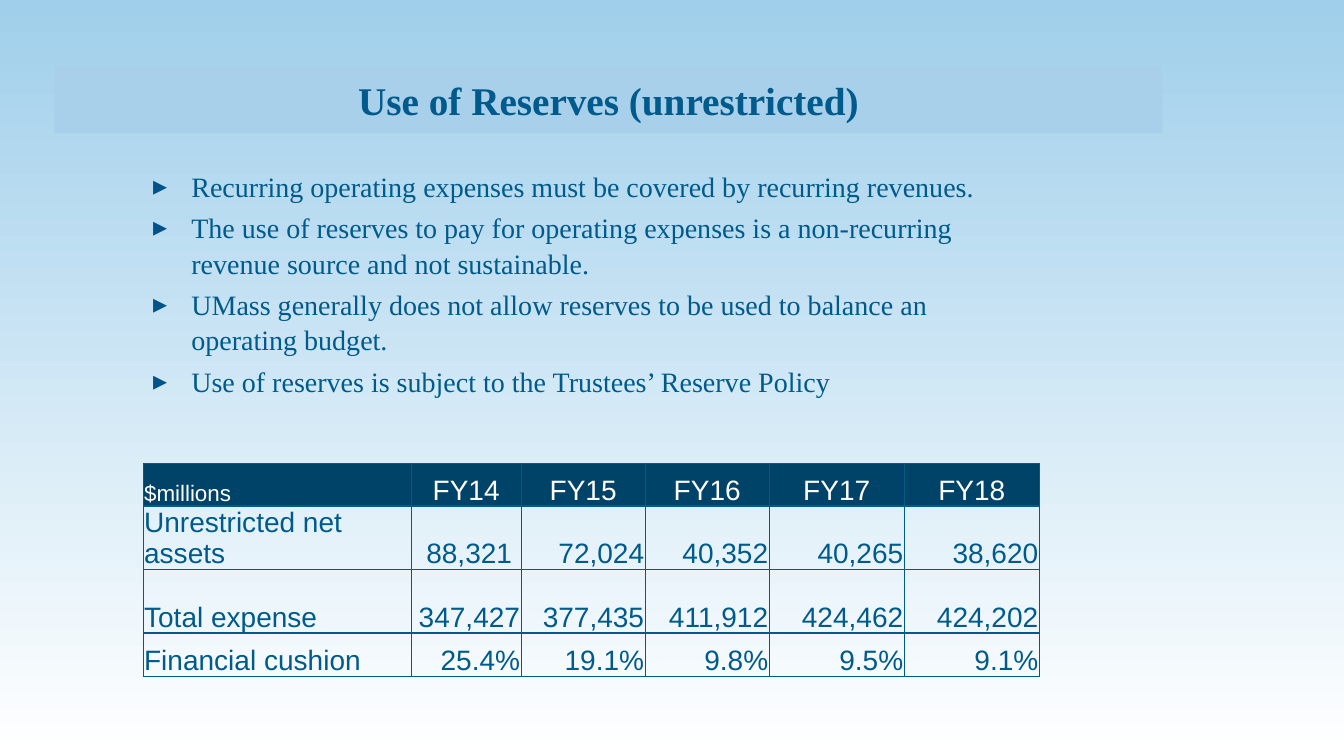
"""Build the slide on the use of unrestricted reserves."""
from dataclasses import dataclass

from lxml.etree import SubElement
from pptx import Presentation
from pptx.dml.color import RGBColor
from pptx.enum.shapes import MSO_SHAPE
from pptx.enum.text import MSO_ANCHOR, PP_ALIGN
from pptx.oxml import parse_xml
from pptx.oxml.ns import nsdecls, qn
from pptx.slide import Slide
from pptx.table import _Cell
from pptx.text.text import Font
from pptx.util import Inches, Pt

SLIDE_WIDTH = Inches(13.33)
SLIDE_HEIGHT = Inches(7.5)


@dataclass(frozen=True)
class Theme:
    sky: str = "A0CFEB"
    white: str = "FFFFFF"
    band: str = "A9D0EA"
    text: str = "005A8B"
    bullet: str = "005389"
    header: str = "004368"
    serif: str = "Times New Roman"
    sans: str = "Arial"
    title_size: int = 28
    body_size: int = 20
    unit_size: int = 16


@dataclass(frozen=True)
class Region:
    """A box in percent of the slide's width and height."""
    left: float
    top: float
    width: float
    height: float

    def place(self) -> tuple[int, int, int, int]:
        return (across(self.left), down(self.top), across(self.width), down(self.height))


@dataclass(frozen=True)
class TableRow:
    label: str
    values: tuple[str, ...]
    height: float


THEME = Theme()
TITLE = Region(4.05, 8.67, 82.45, 8.93)
BODY = Region(10.65, 21.47, 66.69, 34)
TABLE = Region(10.65, 61.33, 66.69, 28.13)
COLUMN_SHARES = (29.92, 12.26, 13.84, 13.84, 15.07, 15.07)
BULLETS = (
    "Recurring operating expenses must be covered by recurring revenues.",
    "The use of reserves to pay for operating expenses is a non-recurring revenue source "
    "and not sustainable.",
    "UMass generally does not allow reserves to be used to balance an operating budget.",
    "Use of reserves is subject to the Trustees’ Reserve Policy",
)
ROWS = (
    TableRow("$millions", ("FY14", "FY15", "FY16", "FY17", "FY18"), 5.6),
    TableRow("Unrestricted net assets", ("88,321", "72,024", "40,352", "40,265", "38,620"), 8.4),
    TableRow("Total expense", ("347,427", "377,435", "411,912", "424,462", "424,202"), 8.4),
    TableRow("Financial cushion", ("25.4%", "19.1%", "9.8%", "9.5%", "9.1%"), 5.73),
)


def across(percent: float) -> int:
    return round(SLIDE_WIDTH * percent / 100)


def down(percent: float) -> int:
    return round(SLIDE_HEIGHT * percent / 100)


def style(font: Font, name: str, size: int, color: str, bold: bool = False) -> None:
    font.name = name
    font.size = Pt(size)
    font.bold = bold
    font.color.rgb = RGBColor.from_string(color)


def paint_background(page: Slide) -> None:
    fill = page.background.fill
    fill.gradient()
    fill.gradient_angle = 270
    for stop, color in zip(fill.gradient_stops, (THEME.sky, THEME.white)):
        stop.color.rgb = RGBColor.from_string(color)


def add_title(page: Slide) -> None:
    box = page.shapes.add_shape(MSO_SHAPE.RECTANGLE, *TITLE.place())
    box.shadow.inherit = False
    box.fill.solid()
    box.fill.fore_color.rgb = RGBColor.from_string(THEME.band)
    box.line.fill.background()
    box.text_frame.text = "Use of Reserves (unrestricted)"
    box.text_frame.vertical_anchor = MSO_ANCHOR.MIDDLE
    para = box.text_frame.paragraphs[0]
    para.alignment = PP_ALIGN.CENTER
    style(para.runs[0].font, THEME.serif, THEME.title_size, THEME.text, bold=True)


def add_bullets(page: Slide) -> None:
    frame = page.shapes.add_textbox(*BODY.place()).text_frame
    frame.word_wrap = True
    frame.text = "\n".join(BULLETS)
    for index, para in enumerate(frame.paragraphs):
        para.line_spacing = 1.06
        para.space_before = Pt(4 if index else 0)
        properties = para._p.get_or_add_pPr()
        properties.set("marL", str(Inches(0.38)))
        properties.set("indent", str(Inches(-0.38)))
        color = SubElement(properties, qn("a:buClr"))
        SubElement(color, qn("a:srgbClr"), val=THEME.bullet)
        SubElement(properties, qn("a:buFont"), typeface=THEME.sans)
        SubElement(properties, qn("a:buChar"), char="▸")
        style(para.runs[0].font, THEME.serif, THEME.body_size, THEME.text)


def add_borders(cell: _Cell) -> None:
    properties = cell._tc.get_or_add_tcPr()
    for index, side in enumerate(("lnL", "lnR", "lnT", "lnB")):
        properties.insert(index, parse_xml(
            f'<a:{side} {nsdecls("a")} w="{Pt(1)}"><a:solidFill>'
            f'<a:srgbClr val="{THEME.text}"/></a:solidFill></a:{side}>'))


def fill_cell(cell: _Cell, text: str, is_header: bool, is_label: bool) -> None:
    cell.text_frame.text = text
    cell.vertical_anchor = MSO_ANCHOR.BOTTOM
    cell.margin_left = cell.margin_right = cell.margin_top = Inches(0.01)
    cell.margin_bottom = 0
    if is_header:
        cell.fill.solid()
        cell.fill.fore_color.rgb = RGBColor.from_string(THEME.header)
    else:
        cell.fill.background()
    add_borders(cell)
    para = cell.text_frame.paragraphs[0]
    if is_label:
        para.alignment = PP_ALIGN.LEFT
    else:
        para.alignment = PP_ALIGN.CENTER if is_header else PP_ALIGN.RIGHT
    size = THEME.unit_size if is_header and is_label else THEME.body_size
    style(para.runs[0].font, THEME.sans, size, THEME.white if is_header else THEME.text)


def add_reserves_table(page: Slide) -> None:
    table = page.shapes.add_table(len(ROWS), len(COLUMN_SHARES), *TABLE.place()).table
    table.first_row = table.horz_banding = False
    for column, share in zip(table.columns, COLUMN_SHARES):
        column.width = across(TABLE.width * share / 100)
    for row_index, row in enumerate(ROWS):
        table.rows[row_index].height = down(row.height)
        for column_index, text in enumerate((row.label, *row.values)):
            fill_cell(table.cell(row_index, column_index), text,
                      row_index == 0, column_index == 0)
    table.cell(1, 1).margin_right = Inches(0.09)


def main() -> None:
    deck = Presentation()
    deck.slide_width = SLIDE_WIDTH
    deck.slide_height = SLIDE_HEIGHT
    page = deck.slides.add_slide(deck.slide_layouts[6])
    paint_background(page)
    add_title(page)
    add_reserves_table(page)
    add_bullets(page)
    deck.save("out.pptx")


if __name__ == "__main__":
    main()
